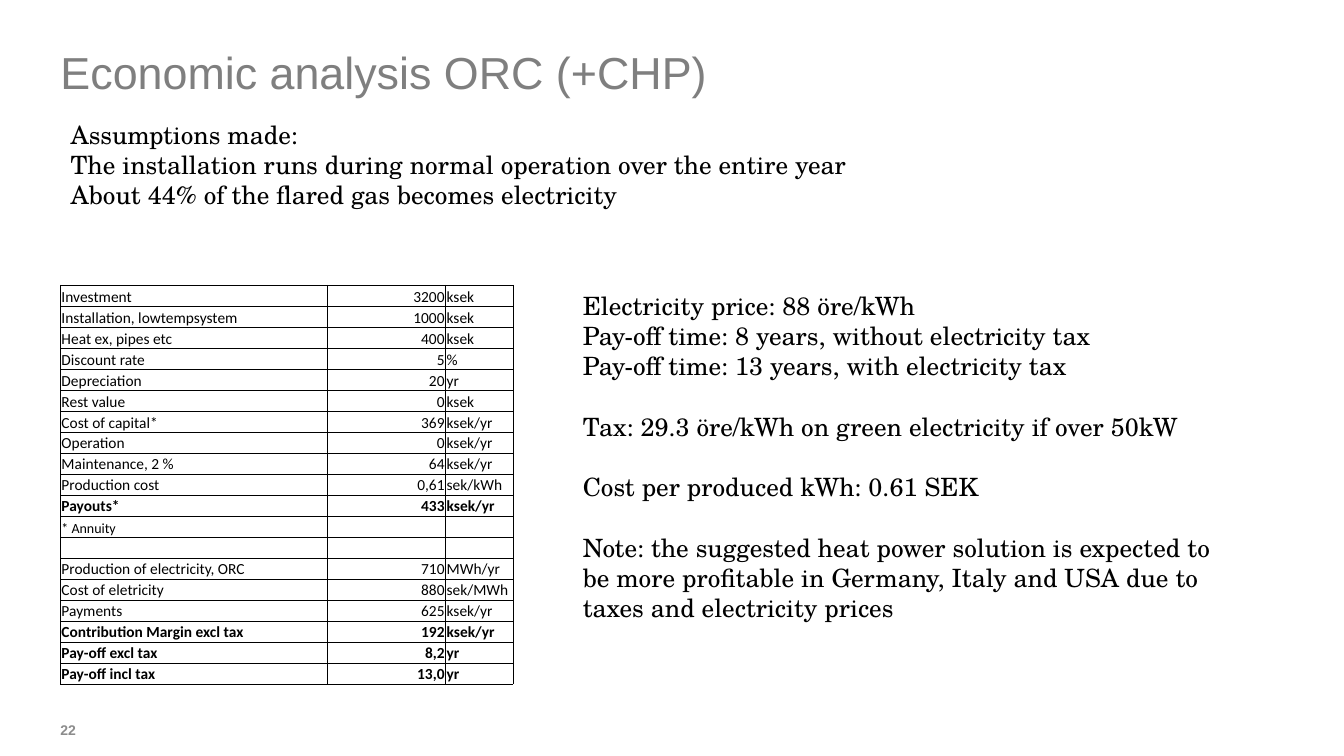
from lxml import etree
from pptx import Presentation
from pptx.dml.color import RGBColor
from pptx.enum.text import MSO_ANCHOR, MSO_AUTO_SIZE, PP_ALIGN
from pptx.oxml.ns import qn
from pptx.util import Inches, Pt

TOP, MIDDLE, BOTTOM = MSO_ANCHOR.TOP, MSO_ANCHOR.MIDDLE, MSO_ANCHOR.BOTTOM
LEFT, RIGHT = PP_ALIGN.LEFT, PP_ALIGN.RIGHT
NO_AUTOFIT = MSO_AUTO_SIZE.NONE

TITLE = "Economic analysis ORC (+CHP)"
PAGE_NUMBER = "22"
BLACK, GREY, PALE_GREY = "000000", "7F7F7F", "8C8C8C"
BODY_FONT = "TeX Gyre Schola"
BLOCK_GAP = 21.6

ASSUMPTIONS = [[
    "Assumptions made:",
    "The installation runs during normal operation over the entire year",
    "About 44% of the flared gas becomes electricity",
]]
FINDINGS = [
    ["Electricity price: 88 öre/kWh",
     "Pay-off time: 8 years, without electricity tax",
     "Pay-off time: 13 years, with electricity tax"],
    ["Tax: 29.3 öre/kWh on green electricity if over 50kW"],
    ["Cost per produced kWh: 0.61 SEK"],
    ["Note: the suggested heat power solution is expected to be more profitable "
     "in Germany, Italy and USA due to taxes and electricity prices"],
]
COSTS = [
    ("Investment", "3200", "ksek"),
    ("Installation, lowtempsystem", "1000", "ksek"),
    ("Heat ex, pipes etc", "400", "ksek"),
    ("Discount rate", "5", "%"),
    ("Depreciation", "20", "yr"),
    ("Rest value", "0", "ksek"),
    ("Cost of capital*", "369", "ksek/yr"),
    ("Operation", "0", "ksek/yr"),
    ("Maintenance, 2 %", "64", "ksek/yr"),
    ("Production cost", "0,61", "sek/kWh"),
    ("Payouts*", "433", "ksek/yr"),
    ("* Annuity", "", ""),
    ("", "", ""),
    ("Production of electricity, ORC", "710", "MWh/yr"),
    ("Cost of eletricity", "880", "sek/MWh"),
    ("Payments", "625", "ksek/yr"),
    ("Contribution Margin excl tax", "192", "ksek/yr"),
    ("Pay-off excl tax", "8,2", "yr"),
    ("Pay-off incl tax", "13,0", "yr"),
]
BOLD_ROWS = {"Payouts*", "Contribution Margin excl tax", "Pay-off excl tax", "Pay-off incl tax"}
SMALL_ROWS = {"* Annuity"}
COLUMN_WIDTHS = [2.65, 1.17, 0.67]
COLUMN_ALIGNS = [LEFT, RIGHT, LEFT]
TABLE_HEIGHT = 3.96


def color(value):
    return RGBColor.from_string(value)


def format_runs(para, font, size, fill, bold=False):
    for span in para.runs:
        span.font.name = font
        span.font.size = Pt(size)
        span.font.color.rgb = color(fill)
        span.font.bold = bold


def place(box, left, top, width, height):
    box.left, box.top = Inches(left), Inches(top)
    box.width, box.height = Inches(width), Inches(height)


def set_frame(frame, anchor, horizontal, vertical):
    frame.auto_size = NO_AUTOFIT
    frame.vertical_anchor = anchor
    frame.margin_left = frame.margin_right = Inches(horizontal)
    frame.margin_top = frame.margin_bottom = Inches(vertical)


def fill_body(box, blocks):
    set_frame(box.text_frame, TOP, 0.1, 0.05)
    box.text_frame.text = "\n".join(line for block in blocks for line in block)
    block_starts = {block[0] for block in blocks[1:]}
    for para in box.text_frame.paragraphs:
        properties = para._p.get_or_add_pPr()
        properties.set("marL", "0")
        properties.set("indent", "0")
        etree.SubElement(properties, qn("a:buNone"))
        para.space_before = Pt(BLOCK_GAP if para.text in block_starts else 0)
        format_runs(para, BODY_FONT, 18, BLACK)


def add_borders(cell):
    properties = cell._tc.get_or_add_tcPr()
    for side in ("a:lnL", "a:lnR", "a:lnT", "a:lnB"):
        line = etree.SubElement(properties, qn(side), w=str(Pt(0.5)))
        fill = etree.SubElement(line, qn("a:solidFill"))
        etree.SubElement(fill, qn("a:srgbClr"), val=BLACK)


def fill_cell(cell, text, align, size, bold):
    add_borders(cell)
    cell.fill.background()
    cell.vertical_anchor = BOTTOM
    cell.margin_left = cell.margin_right = cell.margin_top = Inches(0.01)
    cell.margin_bottom = 0
    cell.text_frame.text = text
    para = cell.text_frame.paragraphs[0]
    para.alignment = align
    format_runs(para, "Calibri", size, BLACK, bold)
    if not text:
        etree.SubElement(para._p, qn("a:endParaRPr"), sz=str(size * 100))


def add_cost_table(page):
    frame = page.shapes.add_table(
        len(COSTS), len(COLUMN_WIDTHS), Inches(0.6), Inches(2.83),
        Inches(sum(COLUMN_WIDTHS)), Inches(TABLE_HEIGHT))
    table = frame.table
    table.first_row = table.horz_banding = False
    for column, width in zip(table.columns, COLUMN_WIDTHS):
        column.width = Inches(width)
    for row, values in zip(table.rows, COSTS):
        row.height = Inches(TABLE_HEIGHT / len(COSTS))
        size = 10 if values[0] in SMALL_ROWS else 11
        for cell, text, align in zip(row.cells, values, COLUMN_ALIGNS):
            fill_cell(cell, text, align, size, values[0] in BOLD_ROWS)


def main():
    deck = Presentation()
    deck.slide_width, deck.slide_height = Inches(13.33), Inches(7.5)
    page = deck.slides.add_slide(deck.slide_layouts[3])
    title, assumptions, findings = list(page.placeholders)[:3]

    place(title, 0.6, 0.44, 12.13, 0.54)
    set_frame(title.text_frame, TOP, 0, 0)
    title.text_frame.text = TITLE
    heading = title.text_frame.paragraphs[0]
    heading.alignment = LEFT
    format_runs(heading, "Arial", 32, GREY)

    place(assumptions, 0.6, 1.13, 12.13, 1.01)
    fill_body(assumptions, ASSUMPTIONS)
    place(findings, 5.68, 2.83, 6.68, 3.74)
    fill_body(findings, FINDINGS)
    add_cost_table(page)

    number = page.shapes.add_textbox(Inches(0.6), Inches(7.11), Inches(0.17), Inches(0.27))
    set_frame(number.text_frame, MIDDLE, 0, 0.05)
    number.text_frame.word_wrap = False
    number.text_frame.text = PAGE_NUMBER
    format_runs(number.text_frame.paragraphs[0], "Arial", 10, PALE_GREY, True)

    deck.save("out.pptx")


if __name__ == "__main__":
    main()
